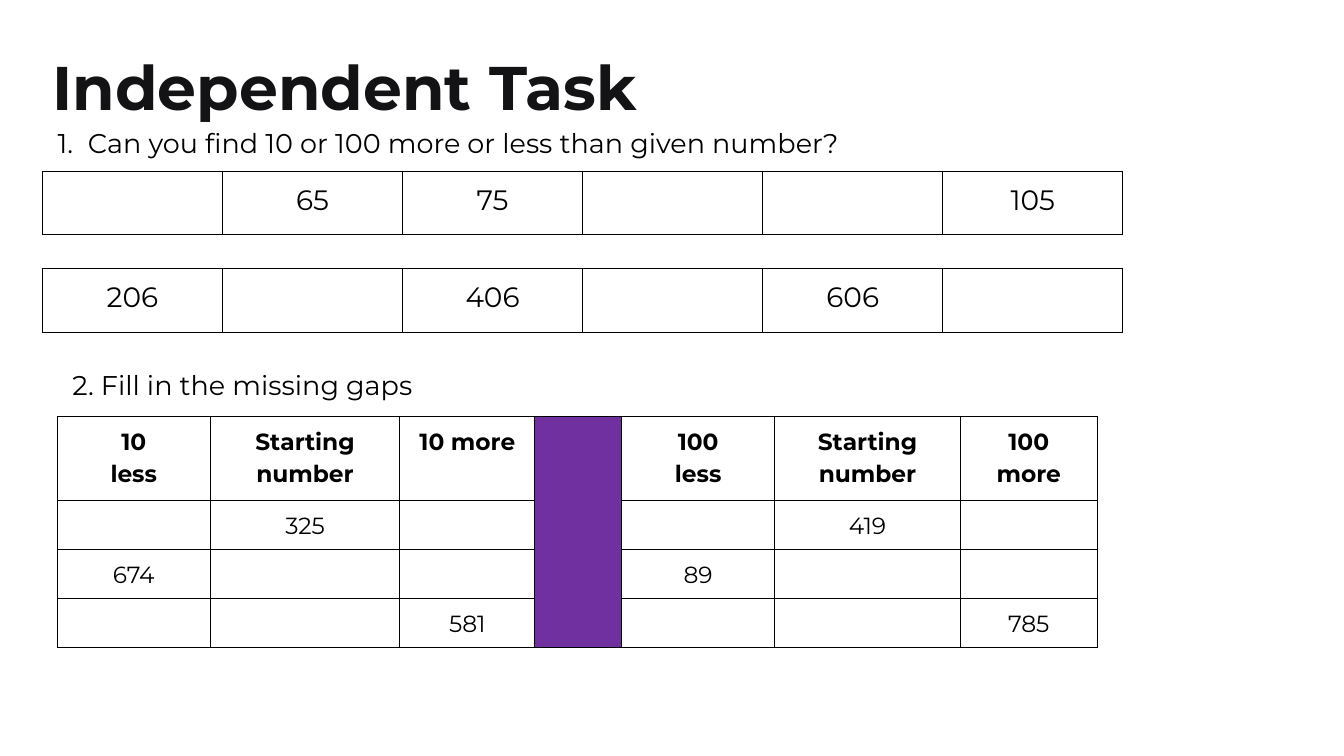
from lxml.etree import SubElement
from pptx import Presentation
from pptx.dml.color import RGBColor as Rgb
from pptx.enum.text import PP_ALIGN as Align
from pptx.oxml.ns import qn
from pptx.util import Inches, Pt

THEME = {
    "font": "Montserrat",
    "title": Rgb.from_string("131316"), "ink": Rgb.from_string("000000"),
    "divider": Rgb.from_string("7030A0"),
    "title_size": 66, "question_size": 29, "sequence_size": 30, "gap_size": 25,
}

deck = Presentation()
deck.slide_width, deck.slide_height = Inches(20), Inches(11.25)
slide = deck.slides.add_slide(deck.slide_layouts[6])
UNIT = deck.slide_width // 20  # the slide is a grid of 20 columns and 11.25 rows


def add_line(text, left, top, width, height, size, color, margins, bold=False):
    """Add a one-paragraph text box, placed in grid units, and return its paragraph."""
    box = slide.shapes.add_textbox(*(round(n * UNIT) for n in (left, top, width, height)))
    frame = box.text_frame
    frame.word_wrap = True
    frame.margin_left = frame.margin_right = Inches(margins[0])
    frame.margin_top = frame.margin_bottom = Inches(margins[1])
    frame.text = text
    font = frame.paragraphs[0].runs[0].font
    font.name, font.size, font.bold = THEME["font"], Pt(size), bold
    font.color.rgb = color
    return frame.paragraphs[0]


def add_grid(rows, left, top, widths, heights, size, bold_header=False):
    """Add a plain table with thin black borders, placed in grid units."""
    frame = slide.shapes.add_table(
        len(rows), len(widths), round(left * UNIT), round(top * UNIT),
        round(sum(widths) * UNIT), round(sum(heights) * UNIT))
    table = frame.table
    table.first_row = table.horz_banding = False
    for column, width in zip(table.columns, widths):
        column.width = round(width * UNIT)
    for r, (values, height) in enumerate(zip(rows, heights)):
        table.rows[r].height = round(height * UNIT)
        for c, value in enumerate(values):
            cell = table.cell(r, c)
            cell.margin_left = cell.margin_right = Inches(0.07)
            cell.margin_top = cell.margin_bottom = Inches(0.1)
            for side in ("a:lnL", "a:lnR", "a:lnT", "a:lnB"):
                border = SubElement(cell._tc.get_or_add_tcPr(), qn(side), w=str(Pt(1)))
                fill = SubElement(border, qn("a:solidFill"))
                SubElement(fill, qn("a:srgbClr"), val=str(THEME["ink"]))
            cell.fill.background()
            cell.text_frame.text = value
            for paragraph in cell.text_frame.paragraphs:
                paragraph.alignment, paragraph.line_spacing = Align.CENTER, 1.15
                for run in paragraph.runs:
                    run.font.name, run.font.size = THEME["font"], Pt(size)
                    run.font.bold = bold_header and r == 0
                    run.font.color.rgb = THEME["ink"]
    return table


title = add_line("Independent Task", 0.63, 0.33, 17.56, 1.45,
                 THEME["title_size"], THEME["title"], (0.15, 0.07), bold=True)
title.line_spacing = 1.3

# Question 1: two number sequences
sequences = [
    ["", "65", "75", "", "", "105"],
    ["206", "", "406", "", "606", ""],
]
for i, sequence in enumerate(sequences):
    add_grid([sequence], 0.63, 2.55 + 1.45 * i, [2.68] * len(sequence), [0.94],
             THEME["sequence_size"])

question = add_line("Can you find 10 or 100 more or less than given number?",
                    0.71, 1.78, 16.46, 0.8, THEME["question_size"], THEME["ink"], (0.1, 0.1))
numbering = question._p.get_or_add_pPr()
numbering.set("marL", str(Inches(0.5)))
numbering.set("indent", str(Inches(-0.45)))
number_color = SubElement(numbering, qn("a:buClr"))
SubElement(number_color, qn("a:srgbClr"), val=str(THEME["ink"]))
SubElement(numbering, qn("a:buFont"), typeface=THEME["font"])
SubElement(numbering, qn("a:buAutoNum"), type="arabicPeriod")

# Question 2: the missing gaps, with a divider between tens and hundreds
gap_rows = [
    ["10\nless", "Starting number", "10 more", "", "100\nless", "Starting number", "100\nmore"],
    ["", "325", "", "", "", "419", ""],
    ["674", "", "", "", "89", "", ""],
    ["", "", "581", "", "", "", "785"],
]
gaps = add_grid(gap_rows, 0.85, 6.2, [2.28, 2.82, 2.01, 1.29, 2.28, 2.76, 2.04],
                [1.25] + [0.73] * 3, THEME["gap_size"], bold_header=True)
divider = gaps.cell(0, 3)
divider.merge(gaps.cell(len(gap_rows) - 1, 3))
divider.fill.solid()
divider.fill.fore_color.rgb = THEME["divider"]

add_line("2. Fill in the missing gaps", 0.98, 5.38, 7.03, 0.59,
         THEME["question_size"], THEME["ink"], (0.1, 0.1))

deck.save("out.pptx")
